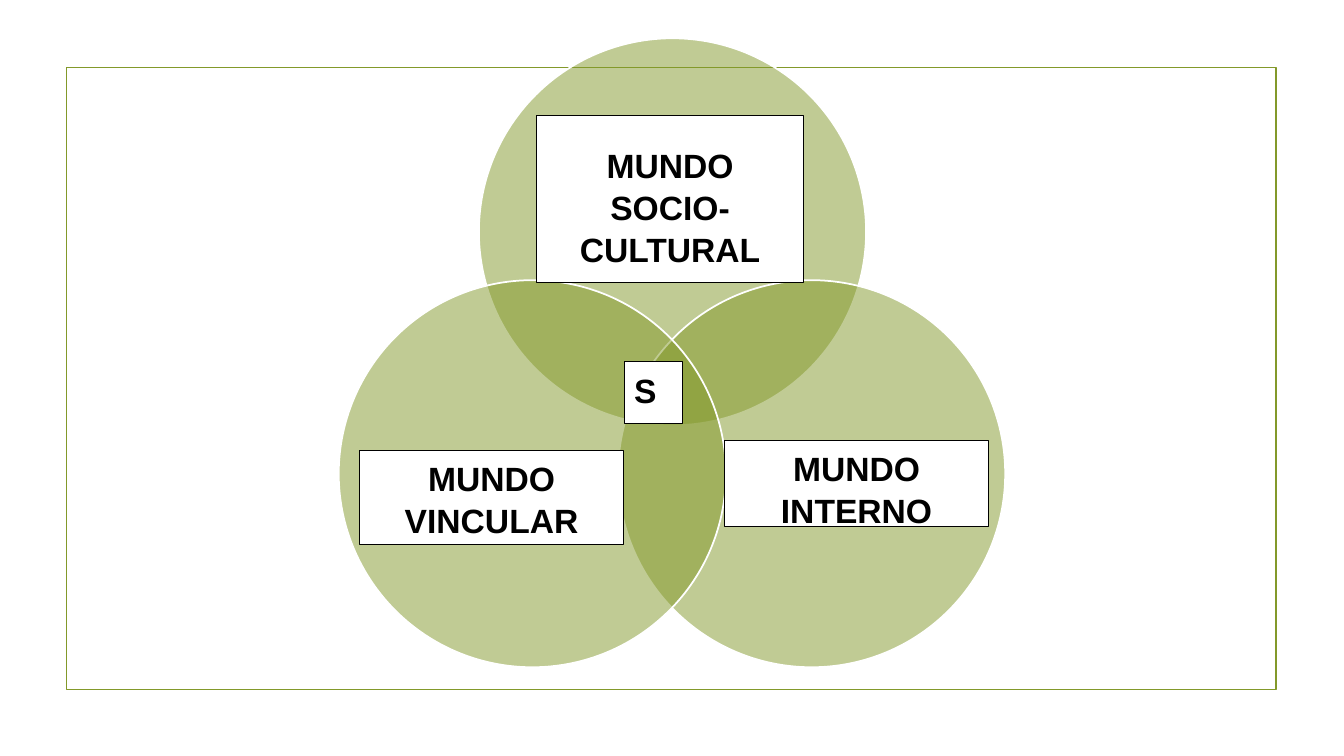
"""Builds a slide with three overlapping worlds around the subject S."""
from dataclasses import dataclass

from lxml import etree
from pptx import Presentation
from pptx.dml.color import RGBColor
from pptx.enum.shapes import MSO_SHAPE
from pptx.enum.text import MSO_ANCHOR, PP_ALIGN
from pptx.oxml.ns import qn
from pptx.util import Inches, Pt

GREEN, WHITE, BLACK = "83992A", "FFFFFF", "000000"
DIAMETER = 3.84


@dataclass
class Label:
    text: str
    left: float
    top: float
    width: float
    height: float
    inset_top: float = 0.06
    align: PP_ALIGN = PP_ALIGN.CENTER


CIRCLES = [(4.75, 0.38), (6.13, 2.78), (3.36, 2.78)]
LABELS = [
    Label("MUNDO VINCULAR", 3.57, 4.47, 2.61, 0.93),
    Label("MUNDO SOCIO-CULTURAL", 5.32, 1.15, 2.65, 1.65, inset_top=0.27),
    Label("MUNDO INTERNO", 7.19, 4.37, 2.61, 0.85),
    Label("S", 6.19, 3.59, 0.58, 0.61, align=PP_ALIGN.LEFT),
]


def rgb(color: str) -> RGBColor:
    return RGBColor.from_string(color)


def add_outlined(s, kind: MSO_SHAPE, left: float, top: float, width: float, height: float,
                 line: str, weight: float, fill: str | None = None):
    sp = s.shapes.add_shape(kind, Inches(left), Inches(top), Inches(width), Inches(height))
    sp.shadow.inherit = False
    sp.line.color.rgb = rgb(line)
    sp.line.width = Pt(weight)
    if fill:
        sp.fill.solid()
        sp.fill.fore_color.rgb = rgb(fill)
    else:
        sp.fill.background()
    return sp


def add_circle(s, left: float, top: float) -> None:
    sp = add_outlined(s, MSO_SHAPE.OVAL, left, top, DIAMETER, DIAMETER, WHITE, 1.25, GREEN)
    color = sp.fill._xPr.find(qn("a:solidFill"))[0]
    etree.SubElement(color, qn("a:alpha"), val="50000")


def add_label(s, label: Label) -> None:
    sp = add_outlined(s, MSO_SHAPE.RECTANGLE, label.left, label.top, label.width,
                      label.height, BLACK, 0.75, WHITE)
    tf = sp.text_frame
    tf.text = label.text
    tf.word_wrap = True
    tf.vertical_anchor = MSO_ANCHOR.TOP
    tf.margin_top = Inches(label.inset_top)
    p = tf.paragraphs[0]
    p.alignment = label.align
    p.line_spacing = 1.04
    font = p.runs[0].font
    font.name, font.size, font.bold = "Arial", Pt(24), True
    font.color.rgb = rgb(BLACK)


def main() -> None:
    prs = Presentation()
    prs.slide_width, prs.slide_height = Inches(13.33), Inches(7.5)
    s = prs.slides.add_slide(prs.slide_layouts[6])
    add_outlined(s, MSO_SHAPE.RECTANGLE, 0.66, 0.67, 12, 6.17, GREEN, 1.25)
    for left, top in CIRCLES:
        add_circle(s, left, top)
    for label in LABELS:
        add_label(s, label)
    prs.save("out.pptx")


if __name__ == "__main__":
    main()
